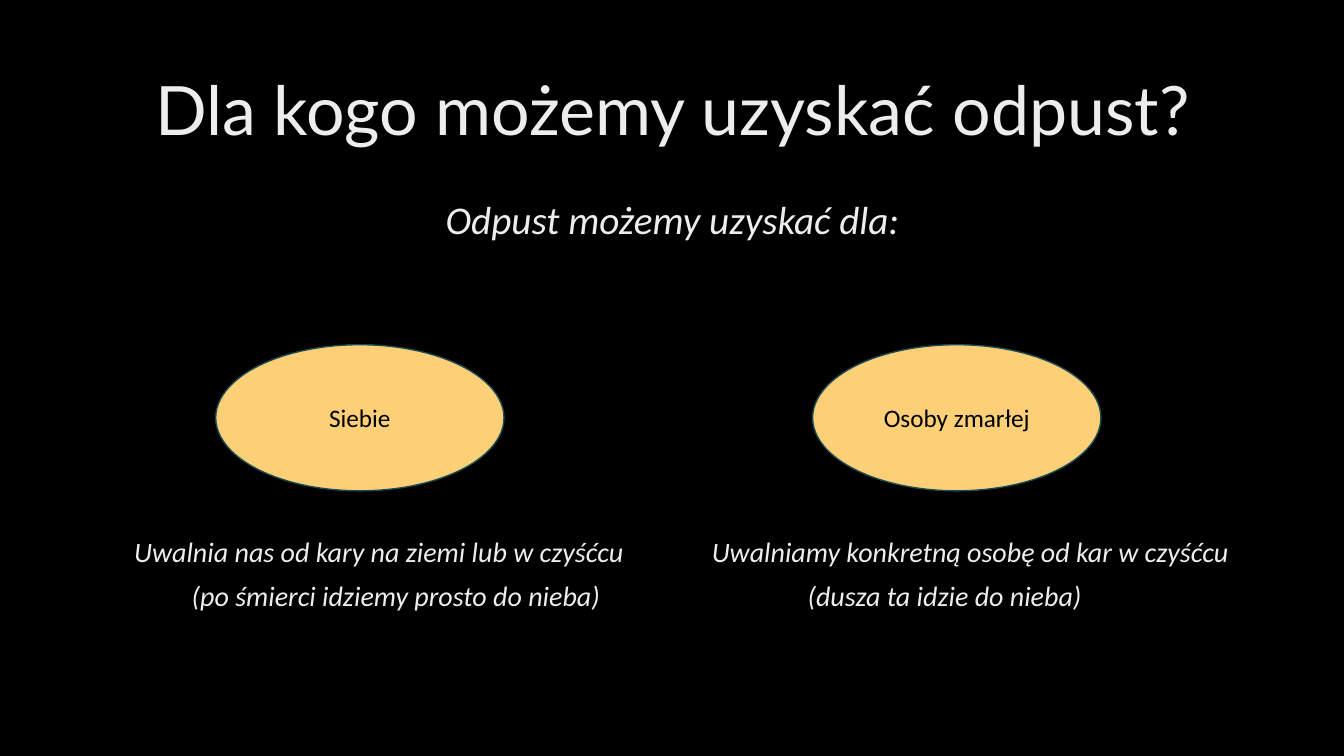
from dataclasses import dataclass

from pptx import Presentation, util as u
from pptx.dml.color import RGBColor
from pptx.enum import shapes, text

WIDTH, HEIGHT = u.Inches(13.33), u.Inches(7.5)
COLUMN, ROW = WIDTH / 100, HEIGHT / 100

BLACK = RGBColor(0x00, 0x00, 0x00)
LIGHT = RGBColor(0xED, 0xED, 0xED)
GOLD = RGBColor(0xFD, 0xD0, 0x77)
TEAL = RGBColor(0x1C, 0x4C, 0x53)

CENTER = text.PP_ALIGN.CENTER
LEFT = text.PP_ALIGN.LEFT


@dataclass(frozen=True)
class Area:
    """A rectangle in grid columns and rows."""
    left: float
    top: float
    width: float
    height: float

    def lengths(self) -> tuple[int, int, int, int]:
        return (round(self.left * COLUMN), round(self.top * ROW),
                round(self.width * COLUMN), round(self.height * ROW))


@dataclass(frozen=True)
class Style:
    size: float
    color: RGBColor
    font: str = "Calibri"
    italic: bool = False
    align: text.PP_ALIGN = CENTER
    line_spacing: float = 0.9


@dataclass(frozen=True)
class Line:
    words: str
    indent: float = 0


@dataclass(frozen=True)
class Recipient:
    name: str
    ellipse_left: float
    caption_left: float
    caption: tuple[Line, Line]


TITLE = Style(48.6, LIGHT, "Lato")
SUBTITLE = Style(28, LIGHT, italic=True)
CAPTION = Style(20, LIGHT, italic=True, align=LEFT)
LABEL = Style(18, BLACK, line_spacing=1.0)

RECIPIENTS = (
    Recipient("Siebie", 16.05, 9.98, (
        Line("Uwalnia nas od kary na ziemi lub w czyśćcu"),
        Line("(po śmierci idziemy prosto do nieba)", 4.28))),
    Recipient("Osoby zmarłej", 60.46, 52.96, (
        Line("Uwalniamy konkretną osobę od kar w czyśćcu"),
        Line("(dusza ta idzie do nieba)", 7.13))),
)


def write_lines(shape, lines: tuple[Line, ...], style: Style,
                anchor: text.MSO_ANCHOR) -> None:
    frame = shape.text_frame
    frame.word_wrap = True
    frame.vertical_anchor = anchor
    frame.margin_left = frame.margin_right = 0
    frame.margin_top = frame.margin_bottom = 0
    for index, line in enumerate(lines):
        paragraph = frame.add_paragraph() if index else frame.paragraphs[0]
        if index:
            paragraph.space_before = u.Pt(10)
        if line.indent:
            properties = paragraph._p.get_or_add_pPr()
            properties.set("marL", str(round(line.indent * COLUMN)))
        paragraph.alignment = style.align
        paragraph.line_spacing = style.line_spacing
        run = paragraph.add_run()
        run.text = line.words
        run.font.name = style.font
        run.font.size = u.Pt(style.size)
        run.font.italic = style.italic
        run.font.color.rgb = style.color


def add_text(slide, area: Area, lines: tuple[Line, ...], style: Style,
             anchor: text.MSO_ANCHOR = text.MSO_ANCHOR.TOP) -> None:
    write_lines(slide.shapes.add_textbox(*area.lengths()), lines, style, anchor)


def add_recipient(slide, recipient: Recipient) -> None:
    """Draw the labelled ellipse with its caption below."""
    area = Area(recipient.ellipse_left, 45.6, 21.45, 19.33)
    ellipse = slide.shapes.add_shape(shapes.MSO_SHAPE.OVAL, *area.lengths())
    ellipse.shadow.inherit = False
    ellipse.fill.solid()
    ellipse.fill.fore_color.rgb = GOLD
    ellipse.line.color.rgb = TEAL
    ellipse.line.width = u.Pt(1)
    write_lines(ellipse, (Line(recipient.name),), LABEL, text.MSO_ANCHOR.MIDDLE)
    add_text(slide, Area(recipient.caption_left, 71.2, 41.25, 11.33),
             recipient.caption, CAPTION)


def main() -> None:
    presentation = Presentation()
    presentation.slide_width, presentation.slide_height = WIDTH, HEIGHT
    slide = presentation.slides.add_slide(presentation.slide_layouts[6])
    slide.background.fill.solid()
    slide.background.fill.fore_color.rgb = BLACK

    add_text(slide, Area(6.9, 5.33, 86.25, 19.33),
             (Line("Dla kogo możemy uzyskać odpust?"),), TITLE,
             text.MSO_ANCHOR.MIDDLE)
    add_text(slide, Area(6.9, 26.53, 86.25, 8),
             (Line("Odpust możemy uzyskać dla:"),), SUBTITLE)
    for recipient in RECIPIENTS:
        add_recipient(slide, recipient)

    presentation.save("out.pptx")


if __name__ == "__main__":
    main()
